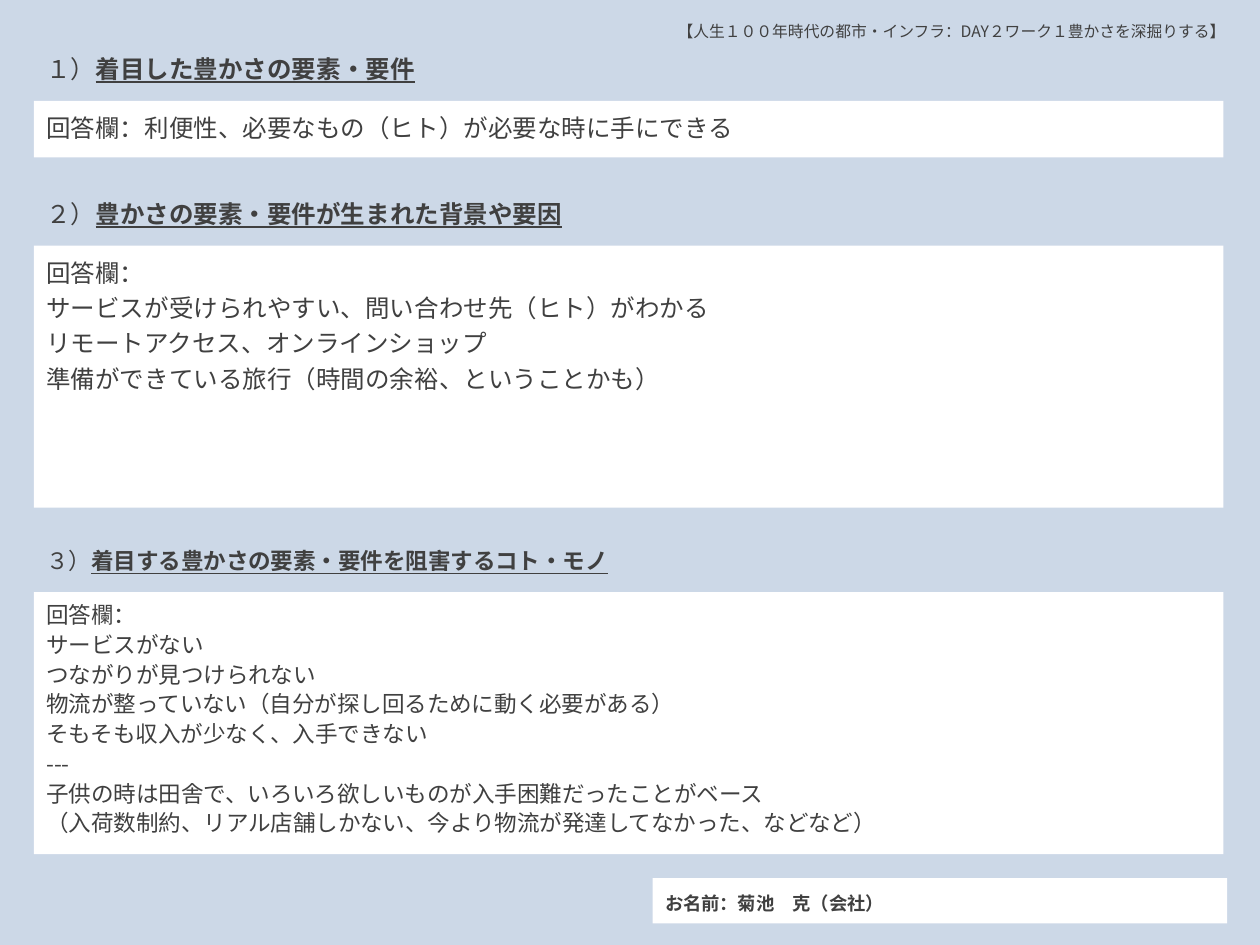
import pptx
import pptx.util
import pptx.dml.color
import pptx.enum.shapes
import pptx.enum.text
import lxml.etree

WIDE, HIGH = 10, 7.5
FONT = "Noto Sans CJK JP"
INK, PAPER, SKY = "404040", "FFFFFF", "CCD8E7"
LEFT, SPAN = 0.27, 9.44
ROW = 0.45

# heading number, title, title width, title top, box top, box height,
# text size, line spacing of the answer, answer lines
PARTS = [
    ("１）", "着目した豊かさの要素・要件", 3.21, 0.33, 0.8, ROW, 14, 1.2,
     ["回答欄：利便性、必要なもの（ヒト）が必要な時に手にできる"]),
    ("２）", "豊かさの要素・要件が生まれた背景や要因", 4.77, 1.48, 1.95, 2.08, 14, 1.2,
     ["回答欄：",
      "サービスが受けられやすい、問い合わせ先（ヒト）がわかる",
      "リモートアクセス、オンラインショップ",
      "準備ができている旅行（時間の余裕、ということかも）"]),
    ("３）", "着目する豊かさの要素・要件を阻害するコト・モノ", 4.84, 4.25, 4.7, 2.08, 12.9, 1.1,
     ["回答欄：",
      "サービスがない",
      "つながりが見つけられない",
      "物流が整っていない（自分が探し回るために動く必要がある）",
      "そもそも収入が少なく、入手できない",
      "---",
      "子供の時は田舎で、いろいろ欲しいものが入手困難だったことがベース",
      "（入荷数制約、リアル店舗しかない、今より物流が発達してなかった、などなど）"]),
]


def paint(fill, tone):
    fill.solid()
    fill.fore_color.rgb = pptx.dml.color.RGBColor.from_string(tone)


def place(*spot):
    return [pptx.util.Inches(x) for x in spot]


def write(para, text, size=14, bold=False, line=False, gap=1.2):
    """Add one run to a paragraph, with Latin and East Asian fonts set."""
    para.alignment = pptx.enum.text.PP_ALIGN.LEFT
    para.line_spacing = gap
    run = para.add_run()
    run.text = text
    font = run.font
    font.name, font.size = FONT, pptx.util.Pt(size)
    font.bold, font.underline = bold, line
    paint(font.fill, INK)
    props = run._r.get_or_add_rPr()
    asian = lxml.etree.Element(pptx.oxml.ns.qn("a:ea"), typeface=FONT)
    props.find(pptx.oxml.ns.qn("a:latin")).addnext(asian)


def label(slide, *spot):
    """Add a wrapped text box and return its first paragraph."""
    frame = slide.shapes.add_textbox(*place(*spot)).text_frame
    frame.word_wrap = True
    return frame.paragraphs[0]


def panel(slide, lines, *spot, middle=False, **style):
    """Add a white answer box with one paragraph per line."""
    box = slide.shapes.add_shape(
        pptx.enum.shapes.MSO_SHAPE.RECTANGLE, *place(*spot))
    box.shadow.inherit = False
    paint(box.fill, PAPER)
    box.line.fill.background()
    frame = box.text_frame
    frame.word_wrap = True
    anchor = pptx.enum.text.MSO_ANCHOR
    frame.vertical_anchor = anchor.MIDDLE if middle else anchor.TOP
    for i, text in enumerate(lines):
        para = frame.add_paragraph() if i else frame.paragraphs[0]
        write(para, text, **style)


def main():
    deck = pptx.Presentation()
    deck.slide_width, deck.slide_height = place(WIDE, HIGH)
    slide = deck.slides.add_slide(deck.slide_layouts[6])
    paint(slide.background.fill, SKY)

    for mark, title, width, head, top, tall, size, gap, lines in PARTS:
        para = label(slide, LEFT, head, width, ROW)
        write(para, mark, size=size)
        write(para, title, size=size, bold=True, line=True)
        panel(slide, lines, LEFT, top, SPAN, tall, size=size, gap=gap)

    panel(slide, ["お名前：菊池　克（会社）"], 5.18, 6.97, 4.56, 0.36,
          middle=True, size=10.5, bold=True)
    write(label(slide, 5.28, 0.09, 4.83, 0.3),
          "【人生１００年時代の都市・インフラ：DAY２ワーク１豊かさを深掘りする】", size=9)
    deck.save("out.pptx")


if __name__ == "__main__":
    main()
